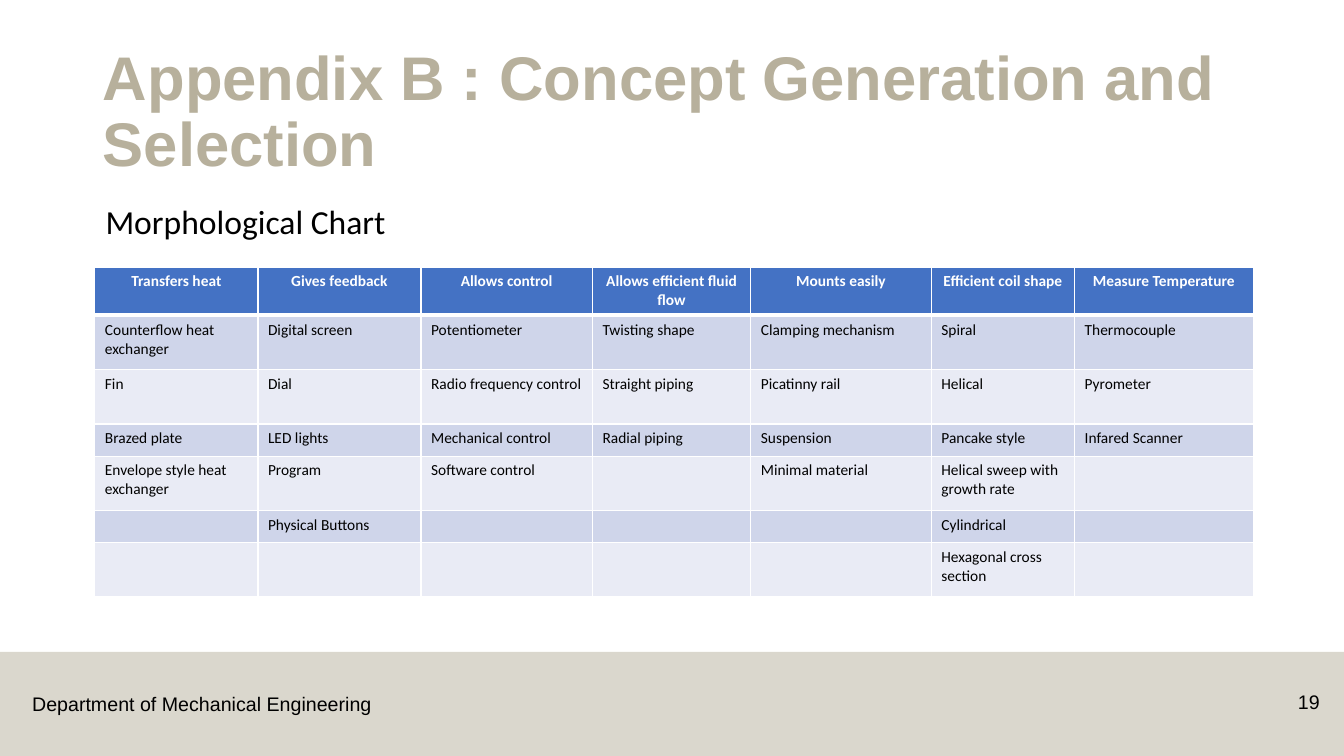
from pptx import Presentation
from pptx.dml.color import RGBColor
from pptx.enum.shapes import MSO_SHAPE
from pptx.enum.text import MSO_ANCHOR, PP_ALIGN
from pptx.oxml import parse_xml
from pptx.oxml.ns import nsdecls
from pptx.util import Cm, Pt
from lxml.etree import SubElement
from pptx.oxml.ns import qn

TAN = RGBColor(0xB7, 0xB0, 0x9C)
BLACK = RGBColor(0, 0, 0)
WHITE = RGBColor(0xFF, 0xFF, 0xFF)
HEADER_BLUE = RGBColor(0x44, 0x72, 0xC4)
BANDS = (RGBColor(0xE9, 0xEB, 0xF5), RGBColor(0xCF, 0xD5, 0xEA))

TITLE = "Appendix B : Concept Generation and Selection"
# "heat exchanger" is held together by a no-break space.
CONCEPTS = {
    "Transfers heat": ["Counterflow heat exchanger", "Fin", "Brazed plate",
                       "Envelope style heat exchanger"],
    "Gives feedback": ["Digital screen", "Dial", "LED lights", "Program",
                       "Physical Buttons"],
    "Allows control": ["Potentiometer", "Radio frequency control",
                       "Mechanical control", "Software control"],
    "Allows efficient fluid flow": ["Twisting shape", "Straight piping",
                                    "Radial piping"],
    "Mounts easily": ["Clamping mechanism", "Picatinny rail", "Suspension",
                      "Minimal material"],
    "Efficient coil shape": ["Spiral", "Helical", "Pancake style",
                             "Helical sweep with growth rate", "Cylindrical",
                             "Hexagonal cross section"],
    "Measure Temperature": ["Thermocouple", "Pyrometer", "Infared Scanner"],
}
COL_WIDTHS = (4.11, 4.11, 4.32, 3.99, 4.55, 3.61, 4.5)
ROW_HEIGHTS = (1.2, 1.37, 1.37, 0.81, 1.37, 0.81, 1.37)

# text, (left, top, width, height), alignment, wrap, font
LABELS = [
    ("Department of Mechanical Engineering", (0.56, 17.32, 9.12, 0.86),
     PP_ALIGN.LEFT, False, {"name": "Arial", "size": Pt(14)}),
    ("19", (31.55, 17.25, 1.96, 1.02),
     PP_ALIGN.RIGHT, True, {"name": "Arial", "size": Pt(14)}),
    ("Morphological Chart", (2.41, 4.95, 8.71, 1.27),
     PP_ALIGN.LEFT, True, {"name": "Calibri", "size": Pt(24)}),
]


def write(p, text, color, align, **font):
    p.alignment = align
    r = p.add_run()
    r.text = text
    r.font.color.rgb = color
    for name, value in font.items():
        setattr(r.font, name, value)


def set_borders(cell, top, bottom):
    """Give the cell white borders, 1 pt at the sides."""
    tcPr = cell._tc.get_or_add_tcPr()
    for i, (side, width) in enumerate(zip("LRTB", (1, 1, top, bottom))):
        tcPr.insert(i, parse_xml(
            f'<a:ln{side} {nsdecls("a")} w="{Pt(width)}"><a:solidFill>'
            f'<a:srgbClr val="{WHITE}"/></a:solidFill></a:ln{side}>'))


def add_band(slide):
    band = slide.shapes.add_shape(MSO_SHAPE.RECTANGLE, 0, Cm(16.43),
                                  Cm(33.87), Cm(2.62))
    band.shadow.inherit = False
    band.line.fill.background()
    band.fill.solid()
    band.fill.fore_color.rgb = TAN
    color = band.fill._xPr.find(".//" + qn("a:srgbClr"))
    SubElement(color, qn("a:alpha"), val="50000")


def add_title(slide):
    title = slide.shapes.title
    title.left, title.top, title.width, title.height = map(
        Cm, (2.34, 1.02, 29.21, 3.68))
    tf = title.text_frame
    tf.vertical_anchor = MSO_ANCHOR.MIDDLE
    p = tf.paragraphs[0]
    p.line_spacing = 0.9
    write(p, TITLE, TAN, PP_ALIGN.LEFT, name="Arial", size=Pt(44), bold=True)


def add_concept_table(slide):
    table = slide.shapes.add_table(
        len(ROW_HEIGHTS), len(COL_WIDTHS), Cm(2.39), Cm(6.73),
        Cm(sum(COL_WIDTHS)), Cm(sum(ROW_HEIGHTS))).table
    for col, width in zip(table.columns, COL_WIDTHS):
        col.width = Cm(width)
    for row, height in zip(table.rows, ROW_HEIGHTS):
        row.height = Cm(height)

    for c, (function, options) in enumerate(CONCEPTS.items()):
        texts = [function, *options]
        for r in range(len(ROW_HEIGHTS)):
            cell = table.cell(r, c)
            header = r == 0
            cell.fill.solid()
            cell.fill.fore_color.rgb = HEADER_BLUE if header else BANDS[r % 2]
            set_borders(cell, top=3 if r == 1 else 1, bottom=3 if header else 1)
            p = cell.text_frame.paragraphs[0]
            if r < len(texts):
                write(p, texts[r], WHITE if header else BLACK,
                      PP_ALIGN.CENTER if header else PP_ALIGN.LEFT,
                      name="Calibri", size=Pt(11), bold=header)
            else:
                SubElement(p._p, qn("a:endParaRPr"), sz="1100")


def main():
    prs = Presentation()
    prs.slide_width, prs.slide_height = Cm(33.87), Cm(19.05)
    slide = prs.slides.add_slide(prs.slide_layouts[5])
    add_band(slide)
    add_title(slide)
    add_concept_table(slide)
    for text, box, align, wrap, font in LABELS:
        tf = slide.shapes.add_textbox(*map(Cm, box)).text_frame
        tf.word_wrap = wrap
        write(tf.paragraphs[0], text, BLACK, align, **font)
    prs.save("out.pptx")


if __name__ == "__main__":
    main()
